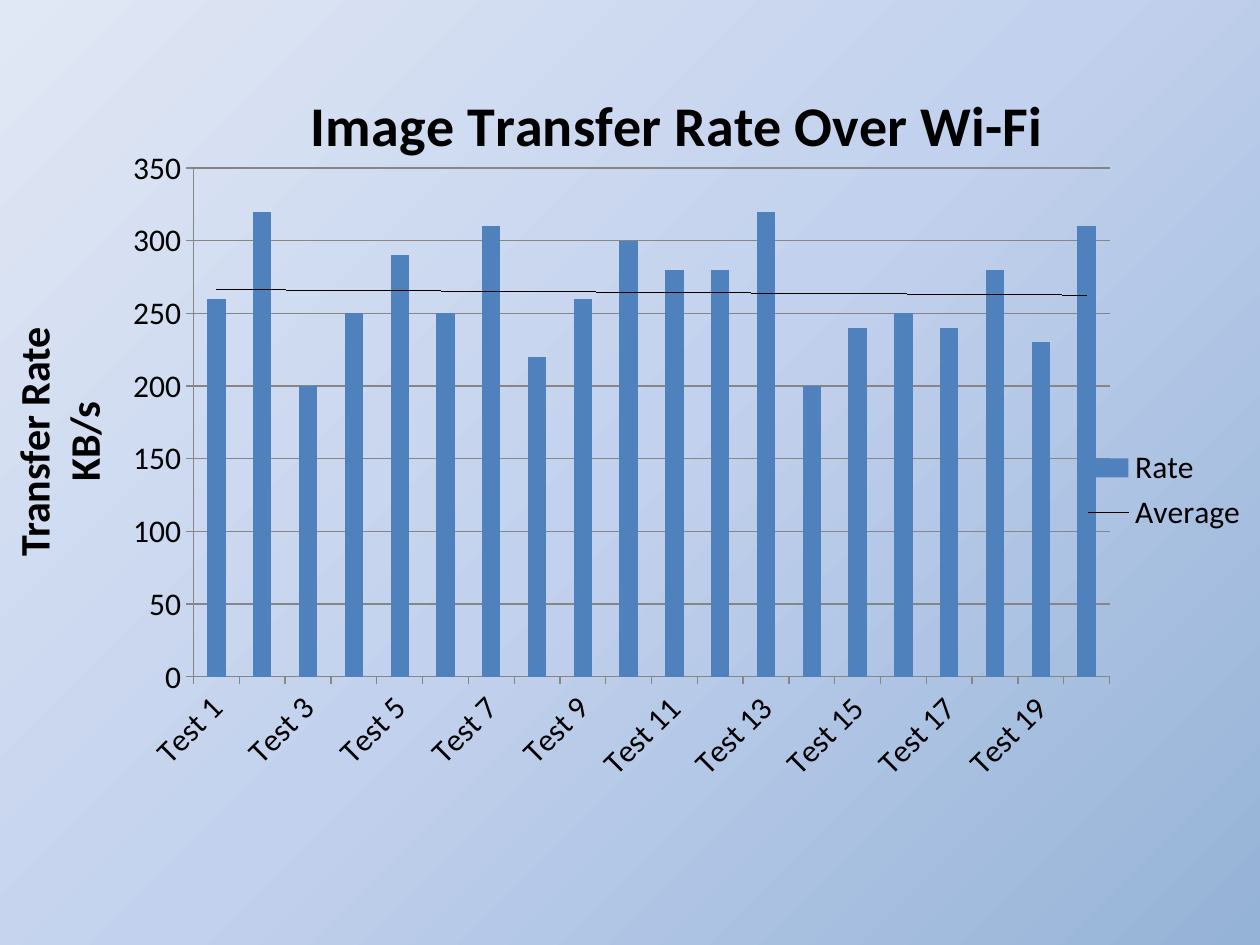
from dataclasses import dataclass
from typing import Optional

import lxml.etree
import pptx
import pptx.chart.data
import pptx.dml.color
import pptx.enum.chart
import pptx.enum.text
import pptx.oxml
import pptx.oxml.ns
import pptx.util
from pptx.util import Inches, Pt

RGBColor = pptx.dml.color.RGBColor
qn = pptx.oxml.ns.qn

BLACK = RGBColor(0x00, 0x00, 0x00)
GRID_GRAY = RGBColor(0x86, 0x86, 0x86)
BAR_BLUE = RGBColor(0x4F, 0x81, 0xBD)
SKY_DEEP = RGBColor(0x95, 0xB3, 0xD7)
SKY_MID = RGBColor(0xC2, 0xD1, 0xED)
SKY_PALE = RGBColor(0xE1, 0xE8, 0xF5)
FONT = "Calibri"

RATES = (260, 320, 200, 250, 290, 250, 310, 220, 260, 300,
         280, 280, 320, 200, 240, 250, 240, 280, 230, 310)

TREND_XML = (
    f'<c:trendline {pptx.oxml.ns.nsdecls("c", "a")}><c:name>Average</c:name>'
    '<c:spPr><a:ln w="0"><a:solidFill><a:srgbClr val="000000"/></a:solidFill></a:ln></c:spPr>'
    '<c:trendlineType val="linear"/><c:dispRSqr val="0"/><c:dispEq val="0"/></c:trendline>'
)


@dataclass
class Placement:
    """Position inside the chart, in percent of its size."""
    x: float
    y: float
    w: Optional[float] = None
    h: Optional[float] = None
    inner: bool = False


def place(part, placement: Placement, after: Optional[str] = None) -> None:
    """Give a chart part a manual layout, following its child named `after`."""
    for old in part.findall(qn("c:layout")):
        part.remove(old)
    layout = lxml.etree.Element(qn("c:layout"))
    manual = lxml.etree.SubElement(layout, qn("c:manualLayout"))
    settings = [("layoutTarget", "inner")] if placement.inner else []
    settings += [("xMode", "edge"), ("yMode", "edge")]
    settings += [(key, round(getattr(placement, key) / 100, 4)) for key in "xywh"
                 if getattr(placement, key) is not None]
    for tag, value in settings:
        lxml.etree.SubElement(manual, qn(f"c:{tag}")).set("val", str(value))
    part.insert(part.index(part.find(qn(after))) + 1 if after else 0, layout)


def style_font(font, size: int, bold: bool = False) -> None:
    font.name, font.size, font.bold = FONT, Pt(size), bold
    font.color.rgb = BLACK


def paint_background(slide) -> None:
    fill = slide.background.fill
    fill.gradient()
    stops = next(slide._element.iter(qn("a:gsLst")))
    stops.append(pptx.oxml.parse_xml(
        f'<a:gs {pptx.oxml.ns.nsdecls("a")} pos="100000"><a:srgbClr val="FFFFFF"/></a:gs>'))
    for stop, position, color in zip(fill.gradient_stops, (0, 0.5, 1),
                                     (SKY_DEEP, SKY_MID, SKY_PALE)):
        stop.position = position
        stop.color.rgb = color
    fill.gradient_angle = 135  # counter-clockwise: dark corner at bottom right


def add_rate_caption(slide) -> None:
    caption = slide.shapes.add_textbox(Inches(-4.04), Inches(2.88), Inches(9), Inches(1.25))
    caption.rotation = 270
    frame = caption.text_frame
    frame.word_wrap = True
    frame.vertical_anchor = pptx.enum.text.MSO_ANCHOR.MIDDLE
    paragraph = frame.paragraphs[0]
    paragraph.text = "Transfer Rate\vKB/s"
    paragraph.alignment = pptx.enum.text.PP_ALIGN.CENTER
    style_font(paragraph.font, 24, bold=True)


def add_rate_chart(slide) -> None:
    data = pptx.chart.data.CategoryChartData()
    data.categories = [f"Test {number}" for number in range(1, len(RATES) + 1)]
    data.add_series("Rate", RATES)
    chart = slide.shapes.add_chart(
        pptx.enum.chart.XL_CHART_TYPE.COLUMN_CLUSTERED,
        Inches(0.75), Inches(0.42), Inches(9.25), Inches(6.37), data).chart
    style_font(chart.font, 18)

    # Title and legend
    chart.has_title = True
    heading = chart.chart_title.text_frame.paragraphs[0]
    heading.text = "Image Transfer Rate Over Wi-Fi"
    style_font(heading.font, 32, bold=True)
    place(chart.chart_title._element, Placement(17.7, 2.8), after="c:tx")
    chart.has_legend = True
    chart.legend.position = pptx.enum.chart.XL_LEGEND_POSITION.RIGHT
    chart.legend.include_in_layout = False
    place(chart.legend._element, Placement(84.3, 48.5, 15, 12), after="c:legendPos")

    # Bars with their trend line
    plot = chart.plots[0]
    plot.gap_width = 150
    plot.vary_by_categories = False
    rate = plot.series[0]
    rate.format.fill.solid()
    rate.format.fill.fore_color.rgb = BAR_BLUE
    rate._element.find(qn("c:cat")).addprevious(pptx.oxml.parse_xml(TREND_XML))
    place(chart._chartSpace.chart.plotArea, Placement(8.5, 14.35, 78.6, 63.4, inner=True))

    # Axes
    tests, speeds = chart.category_axis, chart.value_axis
    speeds.minimum_scale, speeds.maximum_scale, speeds.major_unit = 0, 350, 50
    speeds.has_major_gridlines = True
    for line in (tests.format.line, speeds.format.line, speeds.major_gridlines.format.line):
        line.color.rgb = GRID_GRAY
        line.width = Pt(0.75)
    for axis in (tests, speeds):
        axis.major_tick_mark = pptx.enum.chart.XL_TICK_MARK.OUTSIDE
        style_font(axis.tick_labels.font, 18)
    tests._element.find(qn("c:txPr")).find(qn("a:bodyPr")).set("rot", "-2700000")
    skip = lxml.etree.Element(qn("c:tickLblSkip"))
    skip.set("val", "2")
    tests._element.find(qn("c:noMultiLvlLbl")).addprevious(skip)


def main() -> None:
    deck = pptx.Presentation()
    deck.slide_width, deck.slide_height = Inches(10), Inches(7.5)
    slide = deck.slides.add_slide(deck.slide_layouts[6])
    paint_background(slide)
    add_rate_caption(slide)
    add_rate_chart(slide)
    deck.save("out.pptx")


if __name__ == "__main__":
    main()
